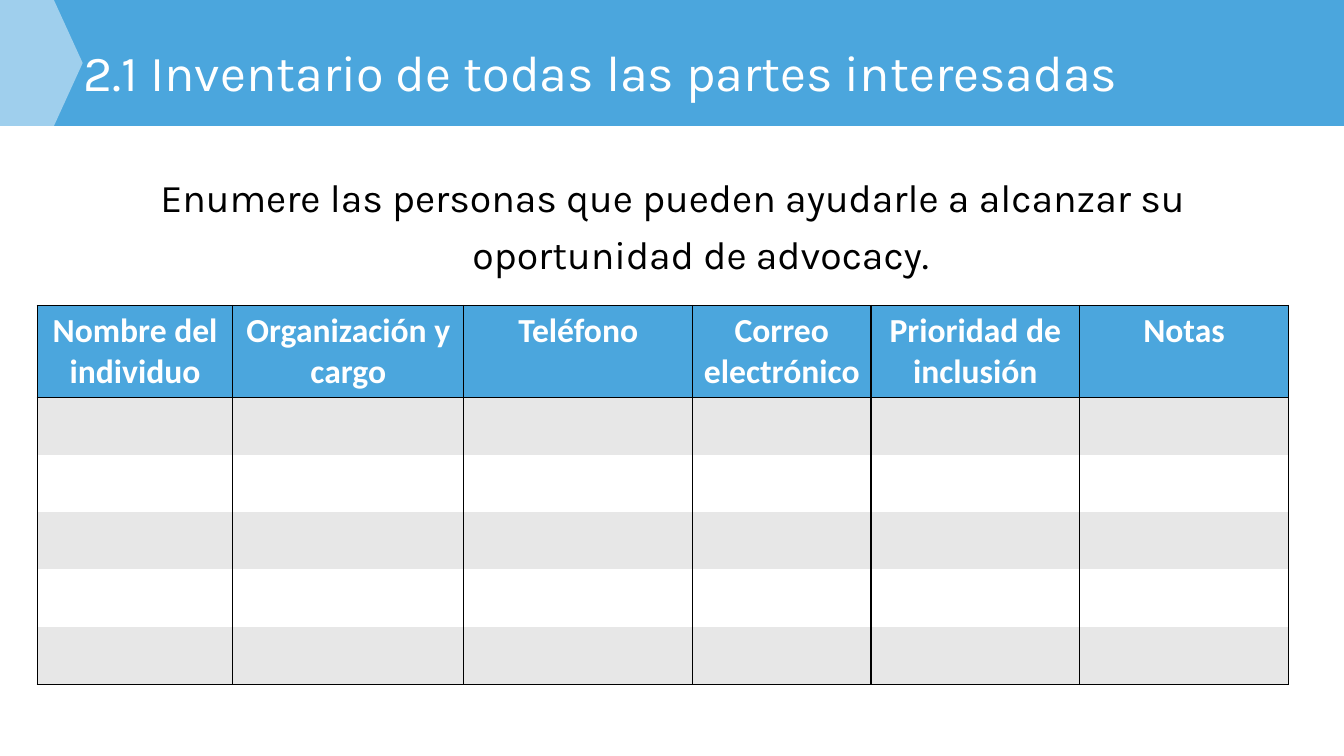
from pptx import Presentation
from pptx.dml.color import RGBColor
from pptx.enum import shapes, text
from pptx.oxml import parse_xml
from pptx.oxml.ns import nsdecls
from pptx.util import Inches, Pt

BLUE = RGBColor(0x4B, 0xA6, 0xDD)
GREY = RGBColor(0xE7, 0xE7, 0xE7)
WHITE = RGBColor(0xFF, 0xFF, 0xFF)
BLACK = RGBColor(0, 0, 0)


def style(para, align, **form):
    para.alignment = align
    for key, val in form.items():
        setattr(para.font, key, val)


def edge(cell, side, shown):
    fill = f'<a:solidFill><a:srgbClr val="{BLACK}"/></a:solidFill>' if shown else "<a:noFill/>"
    return parse_xml(f'<a:ln{side} {nsdecls("a")} w="{Pt(1)}">{fill}</a:ln{side}>')


deck = Presentation()
deck.slide_width, deck.slide_height = Inches(13.33), Inches(7.5)
slide = deck.slides.add_slide(deck.slide_layouts[5])
tree = slide.shapes
title = tree.title

# Header band and arrow, placed behind the title
for kind, width, color in ((shapes.MSO_SHAPE.RECTANGLE, 13.33, BLUE),
                           (shapes.MSO_SHAPE.PENTAGON, 0.82, WHITE)):
    band = tree.add_shape(kind, 0, 0, Inches(width), Inches(1.25))
    band.shadow.inherit = False
    band.fill.solid()
    band.fill.fore_color.rgb = color
    band.line.fill.background()
    title._element.addprevious(band._element)
band.adjustments[0] = 0.348
tint = band.fill._xPr.find(".//{*}srgbClr")
tint.append(parse_xml(f'<a:alpha {nsdecls("a")} val="47000"/>'))

# Title
title.left, title.top = Inches(0.73), Inches(0.43)
title.width, title.height = Inches(11.5), Inches(0.64)
frame = title.text_frame
frame.text = "2.1 Inventario de todas las partes interesadas"
frame.vertical_anchor = text.MSO_ANCHOR.MIDDLE
frame.paragraphs[0].line_spacing = 0.9
style(frame.paragraphs[0], text.PP_ALIGN.LEFT, name="Karla", size=Pt(36))
frame.paragraphs[0].font.color.rgb = WHITE

# Instruction with a hanging indent
body = tree.add_textbox(Inches(0.92), Inches(1.58), Inches(11.5), Inches(1.4))
body.text_frame.word_wrap = True
para = body.text_frame.paragraphs[0]
para.text = "Enumere las personas que pueden ayudarle a alcanzar su oportunidad de advocacy."
para.line_spacing, para.space_before = 1.2, Pt(10)
props = para._p.get_or_add_pPr()
props.set("marL", str(Inches(0.56)))
props.set("indent", str(Inches(-0.56)))
style(para, text.PP_ALIGN.CENTER, name="Karla", size=Pt(28))
para.font.color.rgb = BLACK

# Table of people
heads = ["Nombre del individuo", "Organización y cargo", "Teléfono",
         "Correo electrónico", "Prioridad de inclusión", "Notas"]
widths = [1.94, 2.29, 2.27, 1.77, 2.07, 2.07]
last = 5
grid = tree.add_table(last + 1, len(heads), Inches(0.37), Inches(3.03),
                      Inches(sum(widths)), Inches(3.76)).table
for col, width in zip(grid.columns, widths):
    col.width = Inches(width)
for r, row in enumerate(grid.rows):
    row.height = Inches(0.57 if r else 0.91)
    for c, cell in enumerate(row.cells):
        cell.fill.solid()
        cell.fill.fore_color.rgb = (GREY if r % 2 else WHITE) if r else BLUE
        if r == 0:
            cell.text = heads[c]
            para = cell.text_frame.paragraphs[0]
            style(para, text.PP_ALIGN.CENTER, name="Calibri", size=Pt(24), bold=True)
            para.font.color.rgb = WHITE
        # Column rules everywhere, row rules only around header and foot
        sides = {"L": True, "R": True, "T": r < 2, "B": r in (0, last)}
        for i, (side, shown) in enumerate(sides.items()):
            cell._tc.get_or_add_tcPr().insert(i, edge(cell, side, shown))

deck.save("out.pptx")
